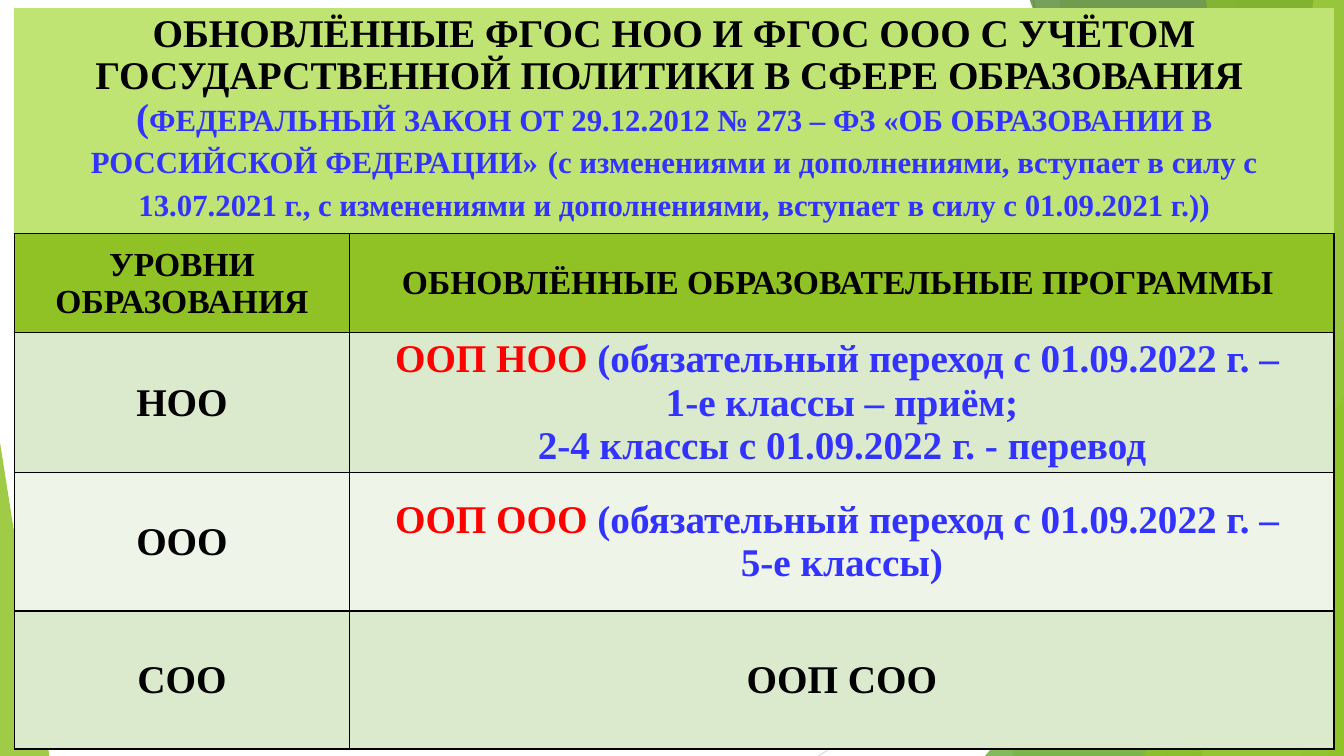
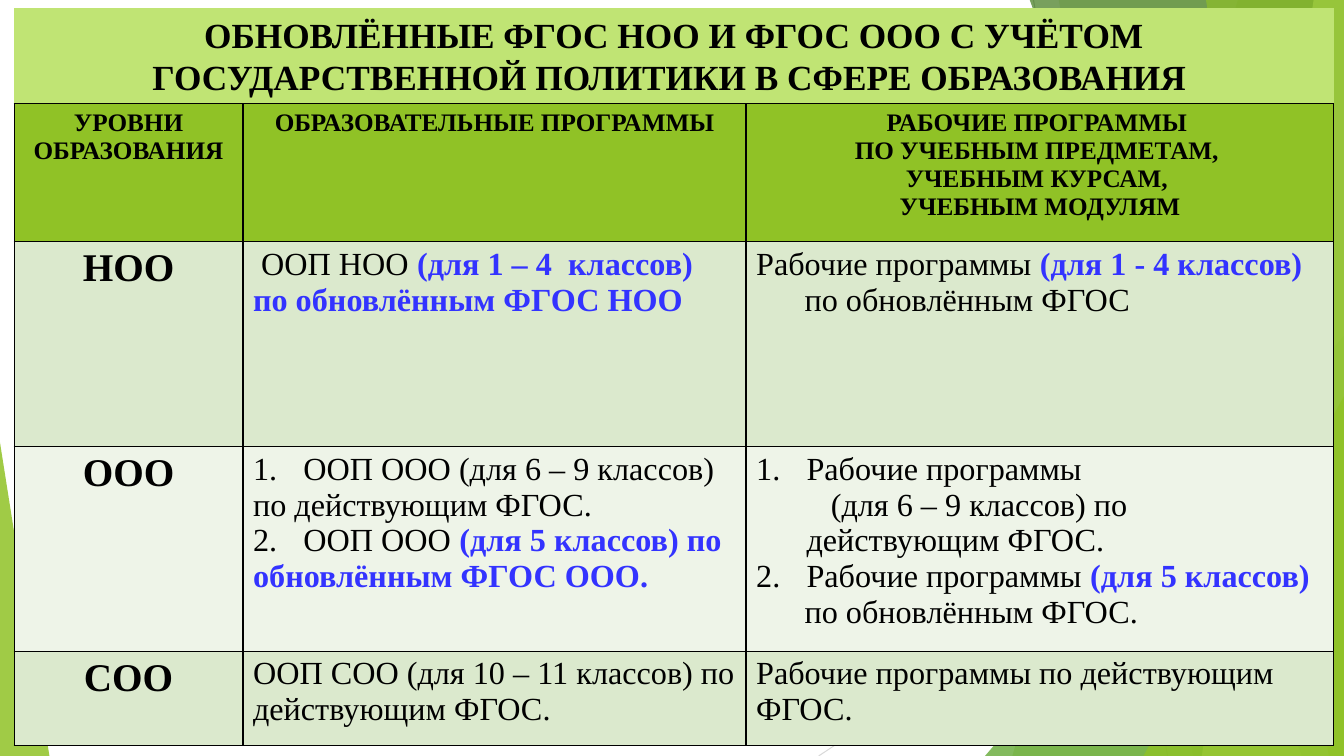
from dataclasses import dataclass

from lxml import etree
from pptx import Presentation
from pptx.dml.color import RGBColor
from pptx.enum.shapes import MSO_CONNECTOR, MSO_SHAPE
from pptx.enum.text import MSO_ANCHOR, MSO_AUTO_SIZE, PP_ALIGN
from pptx.oxml.ns import qn
from pptx.util import Inches, Pt

TRIANGLE = MSO_SHAPE.ISOSCELES_TRIANGLE
STRAIGHT = MSO_CONNECTOR.STRAIGHT
TOP, MIDDLE = MSO_ANCHOR.TOP, MSO_ANCHOR.MIDDLE
LEFT, CENTER = PP_ALIGN.LEFT, PP_ALIGN.CENTER
TITLE_ONLY = 5


@dataclass(frozen=True)
class Theme:
    font: str = "Times New Roman"
    black: str = "000000"
    blue: str = "3333FF"
    red: str = "FF0000"
    green: str = "90C226"
    lime: str = "C0E474"
    leaf: str = "54A021"
    forest: str = "3F7819"
    bands: tuple = ("DBE9CD", "EEF4E8")
    large: float = 28
    title_small: float = 25.2
    header: float = 24
    body: float = 23
    law: float = 22
    header_small: float = 18
    title_spacing: float = 30


T = Theme()


@dataclass(frozen=True)
class Style:
    size: float
    color: str = T.black
    bold: bool = True


@dataclass(frozen=True)
class Para:
    """One paragraph: (text, style) runs, indents in inches, optional list number."""
    runs: tuple
    align: int = LEFT
    margin: float = 0
    first: float = 0
    number: int = 0
    tab: float = 0


LARGE, LARGE_BLUE = Style(T.large), Style(T.large, T.blue)
LARGE_RED = Style(T.large, T.red)
LAW = Style(T.law, T.blue)
HEADER, HEADER_SMALL = Style(T.header), Style(T.header_small)
BODY, BODY_BLUE = Style(T.body, bold=False), Style(T.body, T.blue)

SLIDE_W, SLIDE_H = 13.33, 7.5
BOX_LEFT, BOX_TOP, BOX_W = 0.14, 0.08, 13.09
HEADING = "ОБНОВЛЁННЫЕ ФГОС НОО И ФГОС ООО С УЧЁТОМ ГОСУДАРСТВЕННОЙ ПОЛИТИКИ В СФЕРЕ ОБРАЗОВАНИЯ "


def centered(style, *lines):
    return [Para(((line, style),), CENTER) for line in lines]


def plain(*runs, **layout):
    return Para(runs, **layout)


def add_runs(p, runs):
    for text, style in runs:
        r = p.add_run()
        r.text = text
        r.font.name = T.font
        r.font.size = Pt(style.size)
        r.font.bold = style.bold
        r.font.color.rgb = RGBColor.from_string(style.color)


def write(tf, paras):
    for i, para in enumerate(paras):
        p = tf.add_paragraph() if i else tf.paragraphs[0]
        p.alignment = para.align
        add_runs(p, para.runs)
        pPr = p._p.get_or_add_pPr()
        pPr.set("marL", str(Inches(para.margin)))
        pPr.set("indent", str(Inches(para.first)))
        if para.number:
            etree.SubElement(pPr, qn("a:buAutoNum"), type="arabicPeriod",
                             startAt=str(para.number))
        if para.tab:
            tabs = etree.SubElement(pPr, qn("a:tabLst"))
            etree.SubElement(tabs, qn("a:tab"), pos=str(Inches(para.tab)), algn="l")


def paint(shape, color, opacity):
    shape.shadow.inherit = False
    shape.fill.solid()
    shape.fill.fore_color.rgb = RGBColor.from_string(color)
    shape.line.fill.background()
    srgb = shape._element.spPr.find(qn("a:solidFill"))[0]
    etree.SubElement(srgb, qn("a:alpha"), val=str(opacity * 1000))


def add_line(shapes, start, end, color):
    line = shapes.add_connector(STRAIGHT, *map(Inches, start + end))
    line.line.color.rgb = RGBColor.from_string(color)
    line.line.width = Pt(0.75)
    etree.SubElement(line._element.spPr, qn("a:effectLst"))


def add_ray(shapes, top_x, bottom_x, color, opacity):
    """Band from a slanted left edge to the right side of the slide."""
    top = Inches(-0.01)
    right, bottom = Inches(SLIDE_W), Inches(SLIDE_H)
    outline = shapes.build_freeform(Inches(top_x), top)
    outline.add_line_segments([(right, top), (right, bottom), (Inches(bottom_x), bottom)])
    paint(outline.convert_to_shape(), color, opacity)


def add_corner(shapes, left, top, width, peak, color, opacity):
    """Triangle standing on the bottom edge of the slide."""
    tri = shapes.add_shape(TRIANGLE, Inches(left), Inches(top),
                           Inches(width), Inches(SLIDE_H - top))
    tri.adjustments[0] = peak
    paint(tri, color, opacity)


def add_backdrop(s):
    """Draw the decoration and hand it to the layout, so every slide shows it."""
    group = s.shapes.add_group_shape()
    shapes = group.shapes
    add_line(shapes, (10.25, 0), (11.58, SLIDE_H), "BFBFBF")
    add_line(shapes, (SLIDE_W, 4.03), (8.12, SLIDE_H), "D9D9D9")
    add_ray(shapes, 12.28, 10.04, T.green, 30)
    add_ray(shapes, 10.5, 11.83, T.green, 20)
    add_corner(shapes, 9.77, 3.33, 3.56, 1, T.leaf, 72)
    add_ray(shapes, 10.21, 12.91, T.forest, 70)
    add_ray(shapes, 13.03, 11.92, T.lime, 70)
    add_ray(shapes, 11.96, 13.18, T.green, 65)
    add_corner(shapes, 11.34, 3.93, 1.99, 1, T.green, 80)
    add_corner(shapes, 0, 4.39, 0.49, 0, T.green, 85)
    for i, props in enumerate(group._element.iter(qn("p:cNvPr"))):
        props.set("id", str(100 + i))
    s.slide_layout.shapes._spTree.insert(2, group._element)


def add_title(s, height, lines):
    title = s.shapes.title
    title.left, title.top = Inches(BOX_LEFT), Inches(BOX_TOP)
    title.width, title.height = Inches(BOX_W), Inches(height)
    title.fill.solid()
    title.fill.fore_color.rgb = RGBColor.from_string(T.lime)
    tf = title.text_frame
    tf.word_wrap = True
    tf.auto_size = MSO_AUTO_SIZE.NONE
    tf.vertical_anchor = TOP
    p = tf.paragraphs[0]
    p.alignment = CENTER
    p.line_spacing = Pt(T.title_spacing)
    for i, runs in enumerate(lines):
        if i:
            p.add_line_break()
        add_runs(p, runs)


def add_borders(cell):
    tcPr = cell._tc.get_or_add_tcPr()
    for side in ("a:lnL", "a:lnR", "a:lnT", "a:lnB"):
        ln = etree.SubElement(tcPr, qn(side), w=str(Pt(1)))
        fill = etree.SubElement(ln, qn("a:solidFill"))
        etree.SubElement(fill, qn("a:srgbClr"), val=T.black)


def add_levels_table(s, top, col_widths, row_heights, rows, anchor):
    frame = s.shapes.add_table(len(rows), len(col_widths), Inches(BOX_LEFT), Inches(top),
                               Inches(BOX_W), Inches(sum(row_heights)))
    table = frame.table
    for col, width in zip(table.columns, col_widths):
        col.width = Inches(width)
    for i, (row, height) in enumerate(zip(table.rows, row_heights)):
        row.height = Inches(height)
        color = T.bands[(i - 1) % 2] if i else T.green
        for cell, paras in zip(row.cells, rows[i]):
            add_borders(cell)
            cell.fill.solid()
            cell.fill.fore_color.rgb = RGBColor.from_string(color)
            cell.vertical_anchor = anchor
            write(cell.text_frame, paras)


def transition(program, *lines):
    lead = Para(((program, LARGE_RED),
                 ("(обязательный переход с 01.09.2022 г. – ", LARGE_BLUE)), CENTER)
    return [lead] + centered(LARGE_BLUE, *lines)


def fill_transition_slide(s):
    add_title(s, 2.24, [
        [(HEADING, LARGE)],
        [("(", LARGE_BLUE),
         ("ФЕДЕРАЛЬНЫЙ ЗАКОН ОТ 29.12.2012 № 273 – ФЗ «ОБ ОБРАЗОВАНИИ В "
          "РОССИЙСКОЙ ФЕДЕРАЦИИ»", LAW),
         (" ", LARGE_BLUE),
         ("(с изменениями и дополнениями, вступает в силу с 13.07.2021 г., "
          "с изменениями и дополнениями, вступает в силу с 01.09.2021 г.))", LAW)],
    ])
    rows = [
        [centered(HEADER, "УРОВНИ ОБРАЗОВАНИЯ"),
         centered(HEADER, "ОБНОВЛЁННЫЕ ОБРАЗОВАТЕЛЬНЫЕ ПРОГРАММЫ ")],
        [centered(LARGE, "НОО"),
         transition("ООП НОО ", "1-е классы – приём;",
                    "2-4 классы с 01.09.2022 г. - перевод")],
        [centered(LARGE, "ООО"), transition("ООП ООО ", "5-е классы)")],
        [centered(LARGE, "СОО"), centered(LARGE, "ООП СОО")],
    ]
    add_levels_table(s, 2.32, [3.33, 9.76], [0.98] + [1.37] * 3, rows, MIDDLE)


def fill_programs_slide(s):
    add_title(s, 1.2, [[(HEADING, Style(T.title_small))]])
    hanging = {"margin": 0.5, "first": -0.5}
    rows = [
        [centered(HEADER_SMALL, "УРОВНИ ОБРАЗОВАНИЯ"),
         centered(HEADER_SMALL, "ОБРАЗОВАТЕЛЬНЫЕ ПРОГРАММЫ"),
         centered(HEADER_SMALL, "РАБОЧИЕ ПРОГРАММЫ ", "ПО УЧЕБНЫМ ПРЕДМЕТАМ, ",
                  "УЧЕБНЫМ КУРСАМ, ", "УЧЕБНЫМ МОДУЛЯМ")],
        [centered(LARGE, "НОО"),
         [plain(("ООП НОО ", BODY),
                ("(для 1 – 4  классов) по обновлённым ФГОС НОО", BODY_BLUE), first=0.08)],
         [plain(("Рабочие программы ", BODY), ("(для 1 - 4 классов)", BODY_BLUE), **hanging),
          plain(("по обновлённым ФГОС", BODY), margin=0.48)]],
        [centered(LARGE, "ООО"),
         [plain(("1.\tООП ООО (для 6 – 9 классов) по действующим ФГОС.", BODY), tab=0.48),
          plain(("2.\tООП ООО ", BODY),
                ("(для 5 классов) по обновлённым ФГОС ООО.", BODY_BLUE), tab=0.48)],
         [plain(("Рабочие программы", BODY), number=1, **hanging),
          plain(("(для 6 – 9 классов) по действующим ФГОС.", BODY), margin=0.5, first=0.24),
          plain(("Рабочие программы ", BODY), ("(для 5 классов)", BODY_BLUE),
                number=2, **hanging),
          plain(("по обновлённым ФГОС.", BODY), margin=0.48)]],
        [centered(LARGE, "СОО"),
         [plain(("ООП СОО (для 10 – 11 классов) по действующим ФГОС.", BODY))],
         [plain(("Рабочие программы по действующим ФГОС.", BODY))]],
    ]
    add_levels_table(s, 1.03, [2.27, 4.99, 5.83], [1.37, 2.03, 2.03, 0.94], rows, TOP)


def main():
    prs = Presentation()
    prs.slide_width, prs.slide_height = Inches(SLIDE_W), Inches(SLIDE_H)
    layout = prs.slide_layouts[TITLE_ONLY]
    first, second = (prs.slides.add_slide(layout) for _ in range(2))
    add_backdrop(first)
    fill_transition_slide(first)
    fill_programs_slide(second)
    prs.save("out.pptx")


if __name__ == "__main__":
    main()
